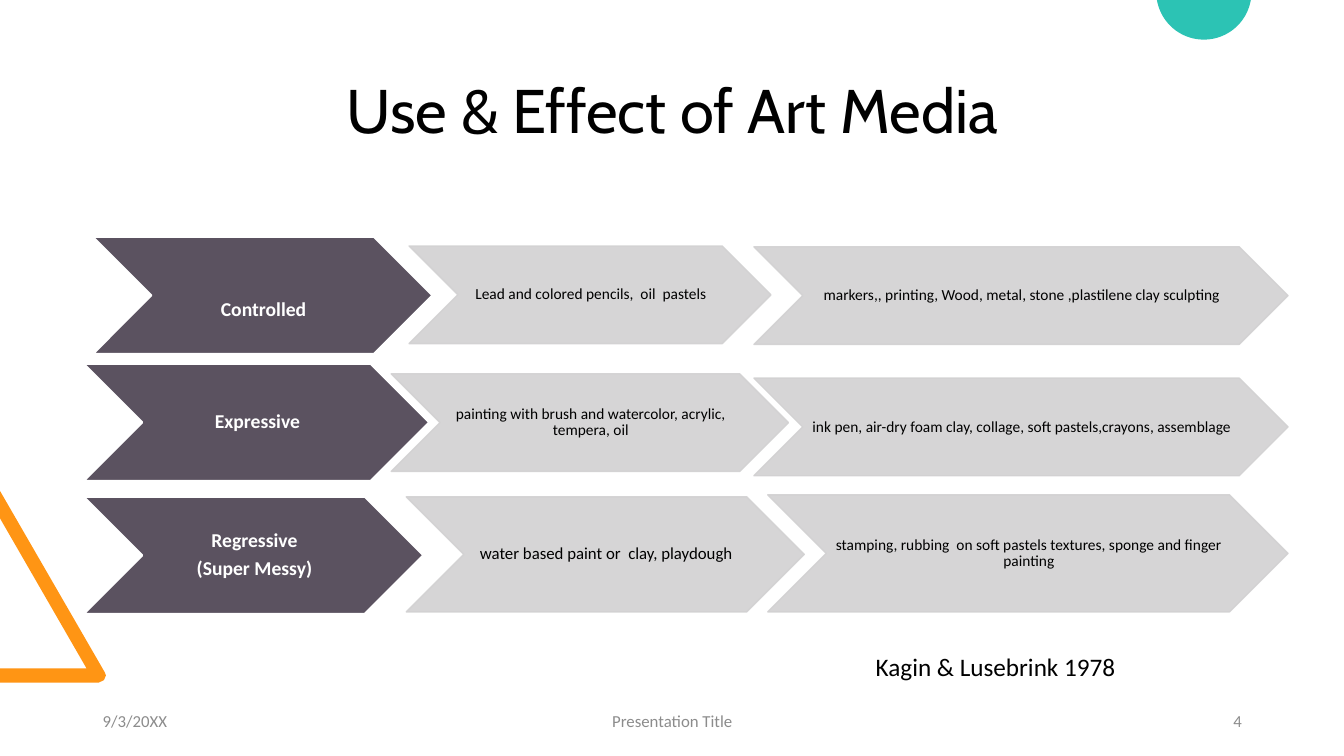
from dataclasses import dataclass
from math import asin, cos, pi, sin

from lxml import etree
from pptx import Presentation
from pptx.dml.color import RGBColor
from pptx.enum.shapes import MSO_SHAPE
from pptx.enum.text import MSO_ANCHOR, MSO_AUTO_SIZE, PP_ALIGN
from pptx.oxml.ns import qn
from pptx.util import Cm, Pt

CHEVRON = MSO_SHAPE.CHEVRON
MIDDLE, TOP = MSO_ANCHOR.MIDDLE, MSO_ANCHOR.TOP
LEFT, CENTER, RIGHT = PP_ALIGN.LEFT, PP_ALIGN.CENTER, PP_ALIGN.RIGHT
FIXED = MSO_AUTO_SIZE.NONE
TITLE_ONLY = 5


@dataclass(frozen=True)
class Theme:
    head: str = "Cabin"
    body: str = "Calibri"
    black: str = "000000"
    white: str = "FFFFFF"
    gray: str = "8C8C8C"
    plum: str = "5B5260"
    pale: str = "D2D1D2"
    teal: str = "2CC3B4"
    orange: str = "FF9514"
    title: int = 44
    source: int = 18
    label: int = 14
    foot: int = 12
    item: int = 11
    alpha: int = 90


class Deck:
    def __init__(self, theme):
        self.theme = theme
        self.prs = Presentation()
        self.prs.slide_width, self.prs.slide_height = Cm(33.87), Cm(19.05)
        self.slide = self.prs.slides.add_slide(self.prs.slide_layouts[TITLE_ONLY])

    def fill_text(self, frame, lines, size, color, align=LEFT, anchor=MIDDLE,
                  font=None, bold=False, tight=False):
        frame.word_wrap = True
        frame.auto_size = FIXED
        frame.vertical_anchor = anchor
        for i, line in enumerate(lines):
            para = frame.paragraphs[0] if i == 0 else frame.add_paragraph()
            para.alignment = align
            if tight:
                para.line_spacing = 0.9
                para.space_after = Pt(round(size * 0.35, 1))
            run = para.add_run()
            run.text = line
            run.font.name = font or self.theme.body
            run.font.size = Pt(size)
            run.font.bold = bold
            run.font.color.rgb = RGBColor.from_string(color)

    def paint(self, shape, color, edge=None, width=1, alpha=None):
        shape.shadow.inherit = False
        shape.fill.solid()
        shape.fill.fore_color.rgb = RGBColor.from_string(color)
        if edge is None:
            shape.line.fill.background()
            return
        shape.line.width = Pt(width)
        shape.line.color.rgb = RGBColor.from_string(edge)
        if alpha:
            for tone in shape.element.spPr.iter(qn("a:srgbClr")):
                etree.SubElement(tone, qn("a:alpha"), val=str(alpha * 1000))

    def title(self, text, box):
        shape = self.slide.shapes.title
        shape.left, shape.top, shape.width, shape.height = map(Cm, box)
        self.fill_text(shape.text_frame, [text], self.theme.title,
                       self.theme.black, CENTER, font=self.theme.head)
        shape.text_frame.paragraphs[0].line_spacing = 0.9

    def text(self, text, box, size, color, align=LEFT, anchor=MIDDLE):
        shape = self.slide.shapes.add_textbox(*map(Cm, box))
        self.fill_text(shape.text_frame, [text], size, color, align, anchor)

    def outline(self, points, color):
        start, *rest = [(Cm(x), Cm(y)) for x, y in points]
        pen = self.slide.shapes.build_freeform(*start)
        pen.add_line_segments(rest, close=True)
        self.paint(pen.convert_to_shape(), color)

    def arrow(self, box, lines, size, label=False, drop=0):
        theme = self.theme
        shape = self.slide.shapes.add_shape(CHEVRON, *map(Cm, box))
        if label:
            self.paint(shape, theme.plum, theme.white, 1.5)
        else:
            self.paint(shape, theme.pale, theme.pale, 1, theme.alpha)
        frame = shape.text_frame
        frame.margin_left, frame.margin_right = Cm(0.05), Cm(0)
        frame.margin_top, frame.margin_bottom = Cm(0.03 + drop), Cm(0.03)
        self.fill_text(frame, lines, size, theme.white if label else theme.black,
                       CENTER, bold=label, tight=True)


def main():
    theme = Theme()
    deck = Deck(theme)

    # Corner decoration: triangle and disc cut by the slide edges
    deck.outline([(0, 17.2), (0, 16.84), (2.18, 16.84), (0, 13.06), (0, 12.37),
                  (2.64, 16.94), (2.67, 17.02), (2.62, 17.14), (2.49, 17.2)],
                 theme.orange)
    mid, rise, radius, steps = 30.34, 0.2, 1.2, 48
    first = asin(rise / radius)
    turns = [first + (pi - 2 * first) * i / steps for i in range(steps + 1)]
    deck.outline([(mid + radius * cos(t), radius * sin(t) - rise) for t in turns],
                 theme.teal)

    # Title
    deck.title("Use & Effect of Art Media", (2.34, 1.02, 29.21, 3.68))

    # Stage labels
    labels = [
        ((2.34, 5.97, 8.56, 2.95), ["Controlled"], 0.74),
        ((2.11, 9.17, 8.71, 2.95), ["Expressive"], 0),
        ((2.11, 12.52, 8.56, 2.95), ["Regressive", "(Super Messy)"], 0),
    ]
    for box, lines, drop in labels:
        deck.arrow(box, lines, theme.label, label=True, drop=drop)

    # Media for each stage
    media = [
        ((10.31, 6.2, 9.12, 2.46), theme.item,
         "Lead and colored pencils,  oil  pastels"),
        ((19, 6.22, 13.46, 2.46), theme.item,
         "markers,, printing, Wood, metal, stone ,plastilene clay sculpting"),
        ((9.86, 9.42, 10.01, 2.46), theme.item,
         "painting with brush and watercolor, acrylic, tempera, oil"),
        ((19, 9.53, 13.46, 2.46), theme.item,
         "ink pen, air-dry foam clay, collage, soft pastels,crayons, assemblage"),
        ((10.24, 12.52, 10.03, 2.9), theme.foot,
         "water based paint or  clay, playdough"),
        ((19.35, 12.47, 13.11, 2.95), theme.item,
         "stamping, rubbing  on soft pastels textures, sponge and finger painting"),
    ]
    for box, size, text in media:
        deck.arrow(box, [text], size)

    # Source and footer
    deck.text("Kagin & Lusebrink 1978", (21.82, 16.28, 7.62, 1.02),
              theme.source, theme.black, anchor=TOP)
    for text, left, width, align in [("9/3/20XX", 2.34, 7.62, LEFT),
                                     ("Presentation Title", 11.23, 11.43, CENTER),
                                     ("4", 23.93, 7.62, RIGHT)]:
        deck.text(text, (left, 17.65, width, 1.02), theme.foot, theme.gray, align)

    deck.prs.save("out.pptx")


if __name__ == "__main__":
    main()
